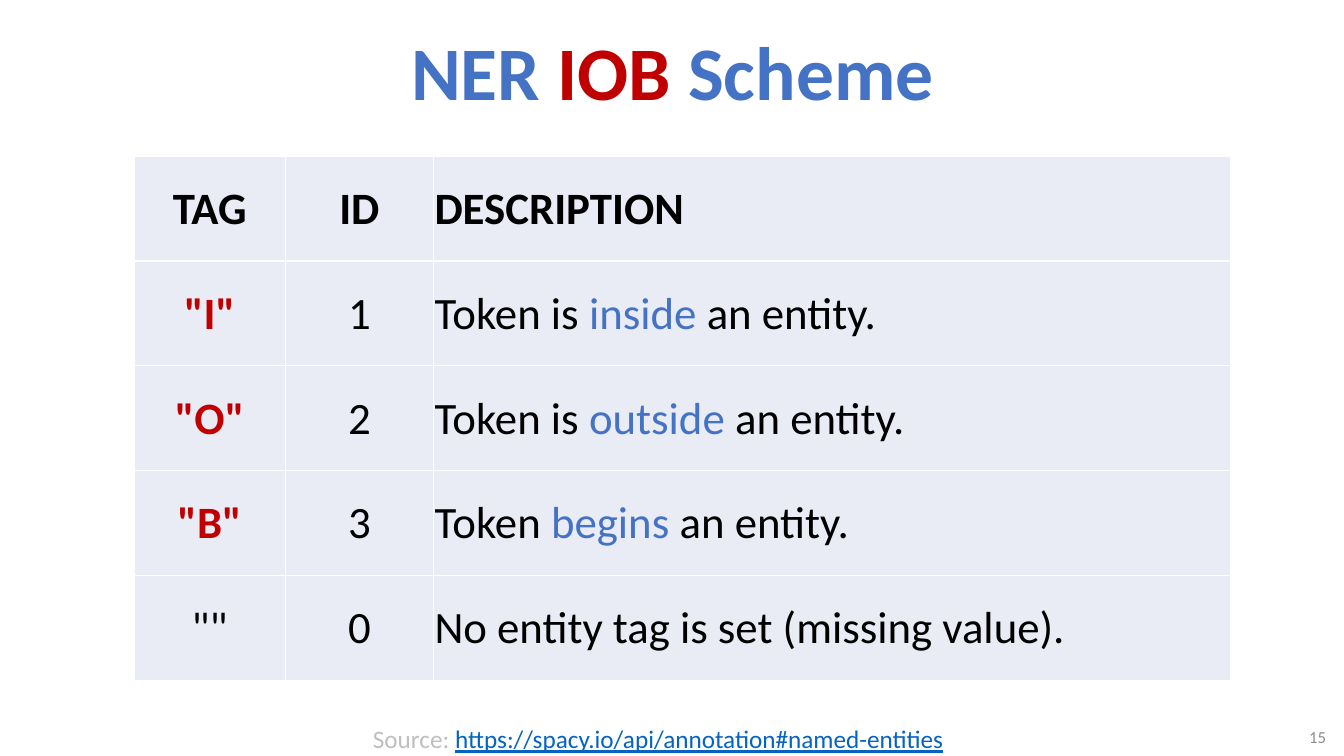
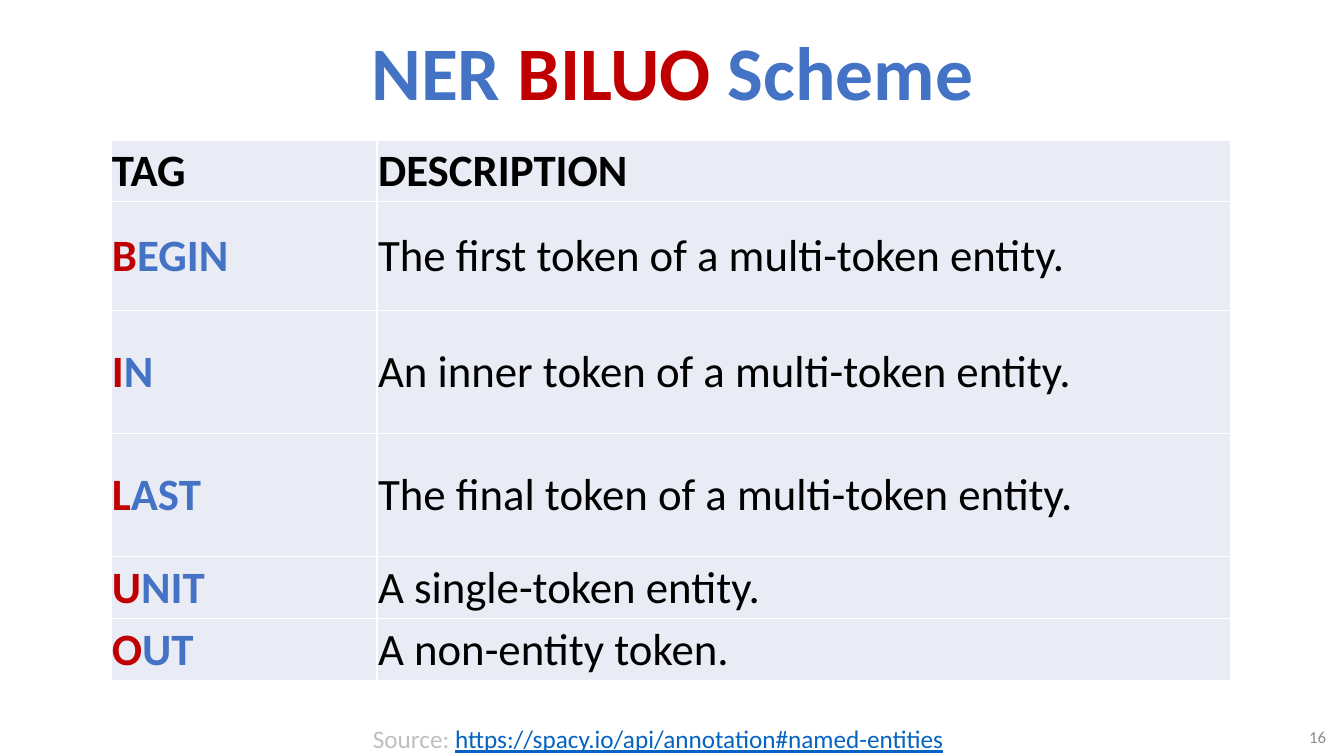
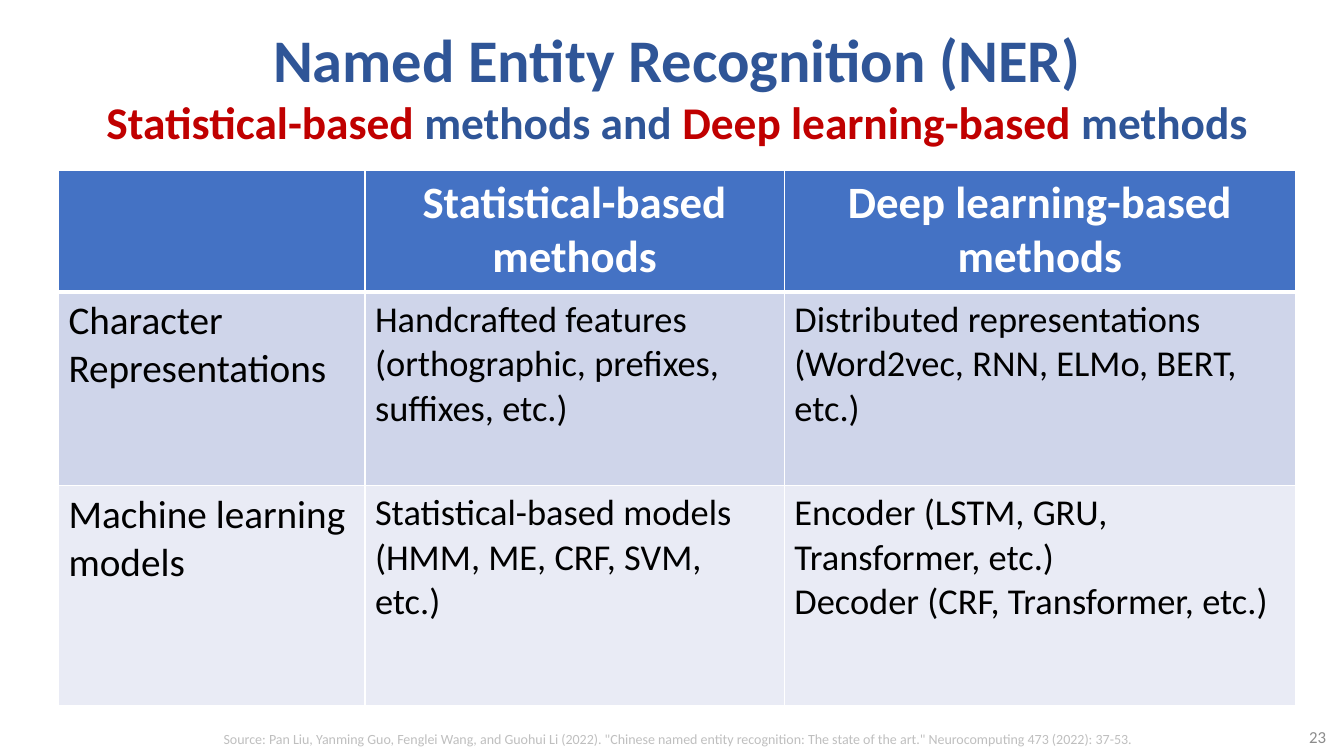
import pptx
import pptx.dml.color
import pptx.enum.text
import pptx.oxml
import pptx.oxml.ns
import pptx.util
from pptx.util import Inches

COLORS = {
    "blue": "4472C4", "navy": "2F5597", "red": "C00000", "black": "000000",
    "white": "FFFFFF", "link": "0563C1", "source": "BFBFBF", "number": "8C8C8C",
    "pale": "E9EBF5", "band": "CFD5EA",
}
FONT = "Calibri"
ALIGN = pptx.enum.text.PP_ALIGN
ANCHOR = pptx.enum.text.MSO_ANCHOR
TIGHT = (0.01, 0.01, 0.01, 0)
LINK = "https://spacy.io/api/annotation#named-entities"


def rgb(name):
    return pptx.dml.color.RGBColor.from_string(COLORS[name])


def write(para, spans, size, align=ALIGN.LEFT):
    """Add (text, colour, bold[, size]) spans; a newline in a text is a line break."""
    para.alignment = align
    for text, color, bold, *own_size in spans:
        for index, line in enumerate(text.split("\n")):
            if index:
                para.add_line_break()
            if not line:
                continue
            span = para.add_run()
            span.text = line
            span.font.name = FONT
            span.font.size = pptx.util.Pt(own_size[0] if own_size else size)
            span.font.bold = bold
            span.font.underline = color == "link"
            span.font.color.rgb = rgb(color)


def add_text(page, place, spans, size, align=ALIGN.LEFT, anchor=ANCHOR.TOP):
    box = page.shapes.add_textbox(*map(Inches, place))
    box.text_frame.word_wrap = True
    box.text_frame.vertical_anchor = anchor
    write(box.text_frame.paragraphs[0], spans, size, align)


def add_title(page, place, spans, size):
    add_text(page, place, spans, size, ALIGN.CENTER, ANCHOR.MIDDLE)


def add_page(deck, number):
    page = deck.slides.add_slide(deck.slide_layouts[6])
    add_text(page, (12.2, 7.18, 1.05, 0.26), [(str(number), "number", False)], 12,
             ALIGN.RIGHT, ANCHOR.MIDDLE)
    return page


def set_borders(cell, bottom):
    properties = cell._tc.get_or_add_tcPr()
    for position, (side, points) in enumerate(
            [("lnL", 1), ("lnR", 1), ("lnT", 1), ("lnB", bottom)]):
        properties.insert(position, pptx.oxml.parse_xml(
            f'<a:{side} {pptx.oxml.ns.nsdecls("a")} w="{points * 12700}">'
            f'<a:solidFill><a:srgbClr val="{COLORS["white"]}"/></a:solidFill></a:{side}>'))


def add_grid(page, corner, widths, heights):
    frame = page.shapes.add_table(len(heights), len(widths), *map(
        Inches, (*corner, sum(widths), sum(heights))))
    grid = frame.table
    grid.first_row = grid.horz_banding = False
    for column, width in zip(grid.columns, widths):
        column.width = Inches(width)
    for row, height in zip(grid.rows, heights):
        row.height = Inches(height)
    return grid


def fill_cell(cell, spans, size, align, fill, anchor=ANCHOR.TOP, insets=None, bottom=1):
    cell.fill.solid()
    cell.fill.fore_color.rgb = rgb(fill)
    set_borders(cell, bottom)
    cell.vertical_anchor = anchor
    if insets:
        (cell.margin_left, cell.margin_top,
         cell.margin_right, cell.margin_bottom) = map(Inches, insets)
    write(cell.text_frame.paragraphs[0], spans, size, align)


def scheme_page(deck, number, scheme, corner, widths, heights, aligns, rows):
    page = add_page(deck, number)
    add_title(page, (2.17, 0, 9, 1.39), [
        ("NER ", "blue", True), (scheme, "red", True), (" Scheme", "blue", True)], 54)
    add_text(page, (3.6, 7.13, 7.02, 0.4), [
        ("Source: ", "source", False), (LINK, "link", False)], 18)
    grid = add_grid(page, corner, widths, heights)
    for r, row in enumerate(rows):
        for c, spans in enumerate(row):
            fill_cell(grid.cell(r, c), spans, 32, aligns[c], "pale", ANCHOR.MIDDLE, TIGHT)


def head(text):
    return [(text, "black", True)]


def plain(text):
    return [(text, "black", False)]


def iob_page(deck):
    rows = [[head("TAG"), head("ID"), head("DESCRIPTION")]]
    for tag, code, before, key in [("I", 1, "Token is ", "inside"),
                                   ("O", 2, "Token is ", "outside"),
                                   ("B", 3, "Token ", "begins")]:
        rows.append([[(f'"{tag}"', "red", True)], plain(str(code)),
                     plain(before) + [(key, "blue", False)] + plain(" an entity.")])
    rows.append([plain('""'), plain("0"), plain("No entity tag is set (missing value).")])
    scheme_page(deck, 15, "IOB", (1.33, 1.55), [1.5, 1.47, 7.91], [1.04] * 5,
                [ALIGN.CENTER, ALIGN.CENTER, ALIGN.LEFT], rows)


def biluo_page(deck):
    rows = [[head("TAG"), head("DESCRIPTION")]]
    for tag, meaning in [("BEGIN", "The first token of a multi-token entity."),
                         ("IN", "An inner token of a multi-token entity."),
                         ("LAST", "The final token of a multi-token entity."),
                         ("UNIT", "A single-token entity."),
                         ("OUT", "A non-entity token.")]:
        rows.append([[(tag[0], "red", True), (tag[1:], "blue", True)], plain(meaning)])
    scheme_page(deck, 16, "BILUO", (1.1, 1.39), [2.64, 8.47],
                [0.61, 1.08, 1.22, 1.22, 0.62, 0.61], [ALIGN.LEFT] * 2, rows)


def methods_page(deck):
    page = add_page(deck, 23)
    add_title(page, (0.58, 0.15, 12.27, 1.39), [
        ("Named Entity Recognition (NER)\n", "navy", True, 43.2),
        ("Statistical-based", "red", True), (" methods and ", "navy", True),
        ("Deep learning-based ", "red", True), ("methods", "navy", True)], 32.4)
    add_text(page, (1.17, 7.2, 11.1, 0.27), [(
        "Source: Pan Liu, Yanming Guo, Fenglei Wang, and Guohui Li (2022). "
        "\"Chinese named entity recognition: The state of the art.\" "
        "Neurocomputing 473 (2022): 37-53.", "source", False)], 10, ALIGN.CENTER)
    grid = add_grid(page, (0.58, 1.69), [3.04, 4.16, 5.07], [1.21, 1.92, 2.18])
    for c, text in enumerate(["", "Statistical-based methods", "Deep learning-based methods"]):
        fill_cell(grid.cell(0, c), [(text, "white", True)], 32, ALIGN.CENTER, "blue", bottom=3)
    rows = [
        ("band", ["Character Representations",
                  "Handcrafted features (orthographic, prefixes, suffixes, etc.)",
                  "Distributed representations (Word2vec, RNN, ELMo, BERT, etc.)"]),
        ("pale", ["Machine learning models",
                  "Statistical-based models\n(HMM, ME, CRF, SVM, etc.)",
                  "Encoder (LSTM, GRU, Transformer, etc.)\nDecoder (CRF, Transformer, etc.)"]),
    ]
    for r, (fill, texts) in enumerate(rows, start=1):
        for c, text in enumerate(texts):
            fill_cell(grid.cell(r, c), plain(text), 26 if c else 28, ALIGN.LEFT, fill)


def main():
    deck = pptx.Presentation()
    deck.slide_width, deck.slide_height = Inches(13.33), Inches(7.5)
    iob_page(deck)
    biluo_page(deck)
    methods_page(deck)
    deck.save("out.pptx")


if __name__ == "__main__":
    main()
